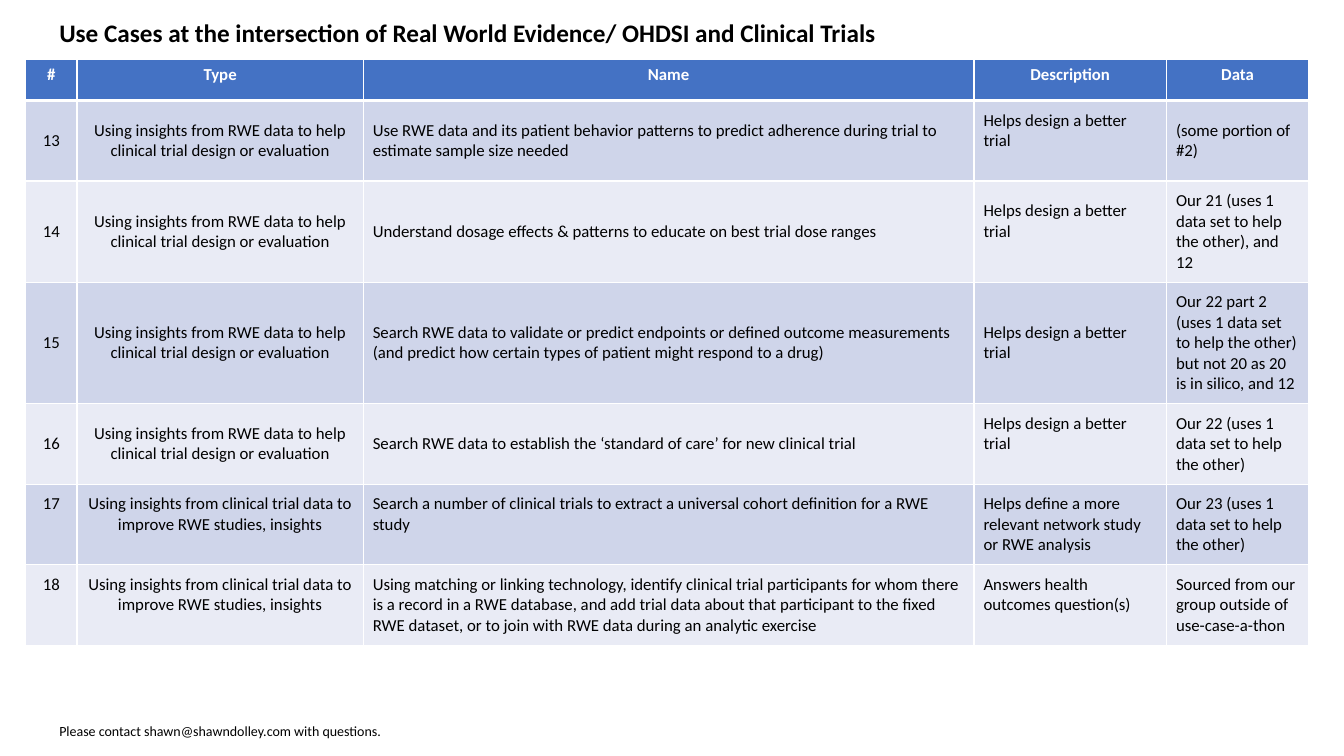
from lxml import etree
from pptx import Presentation
from pptx.dml.color import RGBColor
from pptx.enum.text import MSO_ANCHOR, MSO_AUTO_SIZE, PP_ALIGN
from pptx.oxml.ns import qn
from pptx.util import Pt

TOP, MIDDLE = MSO_ANCHOR.TOP, MSO_ANCHOR.MIDDLE
LEFT, CENTER = PP_ALIGN.LEFT, PP_ALIGN.CENTER
GROW = MSO_AUTO_SIZE.SHAPE_TO_FIT_TEXT

TITLE = "Use Cases at the intersection of Real World Evidence/ OHDSI and Clinical Trials"
CONTACT = "Please contact shawn@shawndolley.com with questions."
HEADINGS = ("#", "Type", "Name", "Description", "Data")
RWE_HELPS_TRIAL = "Using insights from RWE data to help clinical trial design or evaluation"
TRIAL_HELPS_RWE = "Using insights from clinical trial data to improve RWE studies, insights"
BETTER_TRIAL = "Helps design a better trial"
USE_CASES = [
    ("13", RWE_HELPS_TRIAL,
     "Use RWE data and its patient behavior patterns to predict adherence during trial "
     "to estimate sample size needed",
     BETTER_TRIAL, "(some portion of #2)"),
    ("14", RWE_HELPS_TRIAL,
     "Understand dosage effects & patterns to educate on best trial dose ranges",
     BETTER_TRIAL, "Our 21 (uses 1 data set to help the other), and 12"),
    ("15", RWE_HELPS_TRIAL,
     "Search RWE data to validate or predict endpoints or defined outcome measurements "
     "(and predict how certain types of patient might respond to a drug)",
     BETTER_TRIAL,
     "Our 22 part 2 (uses 1 data set to help the other) but not 20 as 20 is in silico, and 12"),
    ("16", RWE_HELPS_TRIAL,
     "Search RWE data to establish the ‘standard of care’ for new clinical trial",
     BETTER_TRIAL, "Our 22 (uses 1 data set to help the other)"),
    ("17", TRIAL_HELPS_RWE,
     "Search a number of clinical trials to extract a universal cohort definition for a RWE study",
     "Helps define a more relevant network study or RWE analysis",
     "Our 23 (uses 1 data set to help the other)"),
    ("18", TRIAL_HELPS_RWE,
     "Using matching or linking technology, identify clinical trial participants for whom "
     "there is a record in a RWE database, and add trial data about that participant to the "
     "fixed RWE dataset, or to join with RWE data during an analytic exercise",
     "Answers health outcomes question(s)",
     "Sourced from our group outside of use-case-a-thon"),
]

COLORS = {"header": "4472C4", "odd": "CFD5EA", "even": "E9EBF5",
          "rule": "FFFFFF", "light": "FFFFFF", "dark": "000000"}
COLUMN_WIDTHS = (36.7, 204.5, 436.3, 137.5, 101.5)
LINES_PER_CASE = (3, 4, 5, 3, 3, 3)
LINE_HEIGHT, PADDING, HEADER_HEIGHT = 14.65, 6.8, 29.3
ROW_HEIGHTS = [HEADER_HEIGHT] + [n * LINE_HEIGHT + 2 * PADDING for n in LINES_PER_CASE]
TABLE_LEFT, TABLE_TOP = 18.3, 42.5
RAISED_DESCRIPTIONS = ("13", "14", "16")
NUMBER_AND_TYPE, DESCRIPTION = (0, 1), 3


def write(frame, text, size, color, bold=False, align=LEFT):
    paragraph = frame.paragraphs[0]
    paragraph.alignment = align
    run = paragraph.add_run()
    run.text = text
    for name, value in {"name": "Calibri", "size": Pt(size), "bold": bold}.items():
        setattr(run.font, name, value)
    run.font.color.rgb = RGBColor.from_string(COLORS[color])


def add_caption(slide, text, top, height, size, bold):
    frame = slide.shapes.add_textbox(Pt(35.3), Pt(top), Pt(722.2), Pt(height)).text_frame
    frame.word_wrap = True
    frame.auto_size = GROW
    write(frame, text, size, "dark", bold)


def rule_cell(cell, widths):
    properties = cell._tc.get_or_add_tcPr()
    for position, (side, width) in enumerate(widths.items()):
        line = etree.Element(qn(f"a:ln{side}"), w=str(Pt(width)))
        fill = etree.SubElement(line, qn("a:solidFill"))
        etree.SubElement(fill, qn("a:srgbClr"), val=COLORS["rule"])
        properties.insert(position, line)


def fill_cell(cell, color):
    cell.fill.solid()
    cell.fill.fore_color.rgb = RGBColor.from_string(COLORS[color])


def add_use_cases(slide):
    table = slide.shapes.add_table(
        len(ROW_HEIGHTS), len(COLUMN_WIDTHS), Pt(TABLE_LEFT), Pt(TABLE_TOP),
        Pt(sum(COLUMN_WIDTHS)), Pt(sum(ROW_HEIGHTS))).table
    for column, width in zip(table.columns, COLUMN_WIDTHS):
        column.width = Pt(width)
    for row, height in zip(table.rows, ROW_HEIGHTS):
        row.height = Pt(height)

    for c, heading in enumerate(HEADINGS):
        cell = table.cell(0, c)
        fill_cell(cell, "header")
        rule_cell(cell, {"L": 1, "R": 1, "T": 1, "B": 3})
        write(cell.text_frame, heading, 12, "light", True, CENTER)

    for r, case in enumerate(USE_CASES, 1):
        for c, text in enumerate(case):
            cell = table.cell(r, c)
            raised = c == DESCRIPTION and case[0] in RAISED_DESCRIPTIONS
            layout = {
                "margin_left": Pt(PADDING), "margin_right": Pt(PADDING),
                "margin_top": Pt(PADDING),
                "margin_bottom": Pt(PADDING + LINE_HEIGHT * raised),
                "vertical_anchor": MIDDLE if case[1] == RWE_HELPS_TRIAL else TOP,
            }
            for name, value in layout.items():
                setattr(cell, name, value)
            fill_cell(cell, "odd" if r % 2 else "even")
            rule_cell(cell, {"L": 1, "R": 1, "T": 3 if r == 1 else 1, "B": 1})
            write(cell.text_frame, text, 12, "dark",
                  align=CENTER if c in NUMBER_AND_TYPE else LEFT)


def main():
    deck = Presentation()
    deck.slide_width, deck.slide_height = Pt(960), Pt(540)
    slide = deck.slides.add_slide(deck.slide_layouts[6])
    add_caption(slide, TITLE, 8.6, 29, 18, True)
    add_caption(slide, CONTACT, 512.6, 19.4, 10, False)
    add_use_cases(slide)
    deck.save("out.pptx")


if __name__ == "__main__":
    main()
